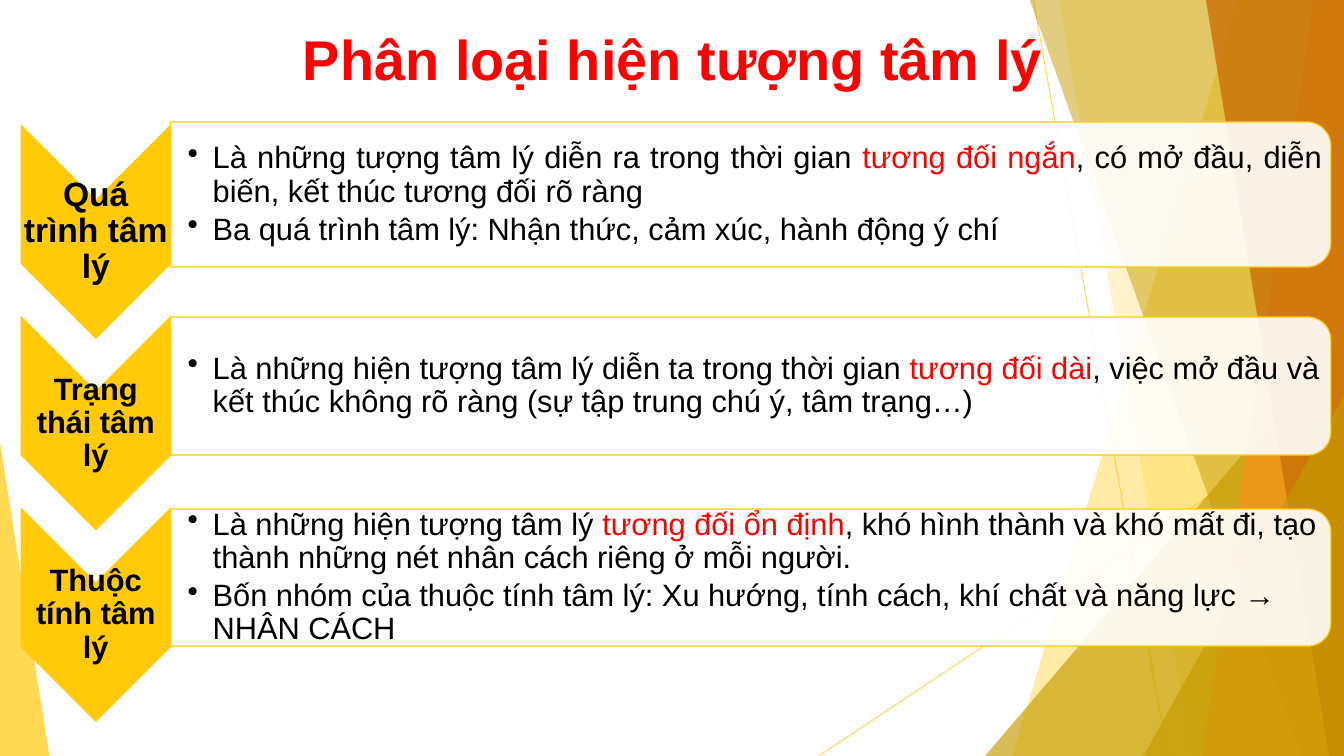
"""Build a slide that sorts psychological phenomena into three chevron rows."""
from dataclasses import dataclass

from lxml import etree
from pptx import Presentation
from pptx.dml.color import RGBColor
from pptx.enum.shapes import MSO_CONNECTOR, MSO_SHAPE
from pptx.enum.text import MSO_ANCHOR, MSO_AUTO_SIZE, PP_ALIGN
from pptx.oxml.ns import qn
from pptx.util import Inches, Pt

STRAIGHT = MSO_CONNECTOR.STRAIGHT
TRIANGLE, CHEVRON, PANEL = MSO_SHAPE.ISOSCELES_TRIANGLE, MSO_SHAPE.CHEVRON, MSO_SHAPE.ROUND_2_SAME_RECTANGLE
MIDDLE, NO_AUTOFIT = MSO_ANCHOR.MIDDLE, MSO_AUTO_SIZE.NONE
LEFT, CENTER, JUSTIFY = PP_ALIGN.LEFT, PP_ALIGN.CENTER, PP_ALIGN.JUSTIFY


@dataclass(frozen=True)
class Theme:
    font: str = "Arial"
    gold: RGBColor = RGBColor(0xFF, 0xCA, 0x08)
    dark_gold: RGBColor = RGBColor(0xC5, 0x9B, 0x00)
    orange: RGBColor = RGBColor(0xF8, 0x93, 0x1D)
    brown: RGBColor = RGBColor(0xCA, 0x6F, 0x06)
    white: RGBColor = RGBColor(0xFF, 0xFF, 0xFF)
    black: RGBColor = RGBColor(0, 0, 0)
    red: RGBColor = RGBColor(0xFF, 0, 0)
    title_size: Pt = Pt(40)
    large_label_size: Pt = Pt(24)
    body_size: Pt = Pt(22)


THEME = Theme()


def paint(shape, color, opacity=100, outline=None):
    """Fill a shape with a colour of the given opacity, with an optional outline."""
    shape.shadow.inherit = False
    shape.fill.solid()
    shape.fill.fore_color.rgb = color
    for color_element in shape.element.spPr.iter(qn("a:srgbClr")):
        etree.SubElement(color_element, qn("a:alpha"), val=str(opacity * 1000))
    if outline is None:
        shape.line.fill.background()
    else:
        shape.line.color.rgb = outline
        shape.line.width = Pt(0.85)


def add_text_frame(left, center, width, height, left_inset):
    """Add a vertically centred text box and return its text frame."""
    box = slide.shapes.add_textbox(Inches(left), Inches(center - height / 2), Inches(width), Inches(height))
    frame = box.text_frame
    frame.word_wrap = True
    frame.vertical_anchor = MIDDLE
    frame.margin_left = Inches(left_inset)
    frame.margin_right = frame.margin_top = frame.margin_bottom = Inches(0.02)
    return frame


presentation = Presentation()
presentation.slide_width, presentation.slide_height = Inches(13.33), Inches(7.5)
slide = presentation.slides.add_slide(presentation.slide_layouts[5])

for start_x, start_y, end_x, end_y in [(10.25, 0, 11.58, 7.5), (13.33, 4.03, 8.12, 7.5)]:
    line = slide.shapes.add_connector(STRAIGHT, Inches(start_x), Inches(start_y), Inches(end_x), Inches(end_y))
    line.line.color.rgb = THEME.gold
    line.line.width = Pt(0.75)
    properties = line.element.spPr
    for color_element in properties.iter(qn("a:srgbClr")):
        etree.SubElement(color_element, qn("a:alpha"), val="70000")
    etree.SubElement(properties, qn("a:effectLst"))

BANDS = [
    (12.28, 10.04, THEME.gold, 36),
    (10.5, 11.83, THEME.gold, 20),
    (9.77, 3.33, 3.56, 4.17, 1, THEME.dark_gold, 66),
    (10.21, 12.91, THEME.dark_gold, 50),
    (13.03, 11.92, THEME.orange, 70),
    (11.96, 13.18, THEME.brown, 80),
    (11.34, 3.93, 1.99, 3.57, 1, THEME.dark_gold, 66),
    (0, 4.39, 0.49, 3.11, 0, THEME.gold, 70),
]
for *geometry, color, opacity in BANDS:
    if len(geometry) == 2:
        top_x, bottom_x = geometry
        builder = slide.shapes.build_freeform(Inches(top_x), Inches(-0.01))
        corners = [(13.33, -0.01), (13.33, 7.5), (bottom_x, 7.5)]
        builder.add_line_segments([(Inches(x), Inches(y)) for x, y in corners])
        band = builder.convert_to_shape()
    else:
        *bounds, apex = geometry
        band = slide.shapes.add_shape(TRIANGLE, *map(Inches, bounds))
        band.adjustments[0] = apex
    paint(band, color, opacity)

title = slide.shapes.title
slide.shapes.element.append(title.element)
title.left, title.top, title.width, title.height = map(Inches, (0.92, 0.15, 11.5, 0.85))
title.text_frame.text = "Phân loại hiện tượng tâm lý"
title.text_frame.auto_size = NO_AUTOFIT
title.text_frame.vertical_anchor = MIDDLE
title_paragraph = title.text_frame.paragraphs[0]
title_paragraph.alignment = CENTER
title_paragraph.font.name = THEME.font
title_paragraph.font.size = THEME.title_size
title_paragraph.font.bold = True
title_paragraph.font.color.rgb = THEME.red

ROWS = [
    ("Quá trình tâm lý", THEME.large_label_size, 1.44, JUSTIFY, [
        ["Là những tượng tâm lý diễn ra trong thời gian ", "tương đối ngắn",
         ", có mở đầu, diễn biến, kết thúc tương đối rõ ràng"],
        ["Ba quá trình tâm lý: Nhận thức, cảm xúc, hành động ý chí"]]),
    ("Trạng thái tâm lý", THEME.body_size, 1.37, LEFT, [
        ["Là những hiện tượng tâm lý diễn ta trong thời gian ", "tương đối dài",
         ", việc mở đầu và kết thúc không rõ ràng (sự tập trung chú ý, tâm trạng…)"]]),
    ("Thuộc tính tâm lý", THEME.body_size, 1.36, LEFT, [
        ["Là những hiện tượng tâm lý ", "tương đối ổn định",
         ", khó hình thành và khó mất đi, tạo thành những nét nhân cách riêng ở mỗi người."],
        ["Bốn nhóm của thuộc tính tâm lý: Xu hướng, tính cách, khí chất và năng lực → NHÂN CÁCH"]]),
]
FIRST_CENTER, ROW_PITCH, CHEVRON_DROP = 1.93, 1.9, 0.37
CHEVRON_LEFT, CHEVRON_LENGTH, CHEVRON_WIDTH = 0.21, 2.11, 1.48
PANEL_LEFT, PANEL_WIDTH = CHEVRON_LEFT + CHEVRON_WIDTH, 11.51

for row, (label, label_size, panel_height, alignment, bullets) in enumerate(ROWS):
    panel_center = FIRST_CENTER + row * ROW_PITCH
    chevron_center = panel_center + CHEVRON_DROP
    turned_shapes = [
        (CHEVRON, CHEVRON_LEFT, chevron_center, CHEVRON_WIDTH, CHEVRON_LENGTH, THEME.gold, 100),
        (PANEL, PANEL_LEFT, panel_center, PANEL_WIDTH, panel_height, THEME.white, 90),
    ]
    for kind, left, center, width, height, color, opacity in turned_shapes:
        shape = slide.shapes.add_shape(kind, Inches(left + (width - height) / 2), Inches(center - width / 2),
                                       Inches(height), Inches(width))
        shape.rotation = 90
        paint(shape, color, opacity, THEME.gold)

    label_frame = add_text_frame(CHEVRON_LEFT, chevron_center, CHEVRON_WIDTH, 0.63, 0.02)
    label_frame.text = label
    label_paragraph = label_frame.paragraphs[0]
    label_paragraph.alignment = CENTER
    label_paragraph.line_spacing = 0.9
    label_paragraph.font.name = THEME.font
    label_paragraph.font.size = label_size
    label_paragraph.font.bold = True
    label_paragraph.font.color.rgb = THEME.black

    body_frame = add_text_frame(PANEL_LEFT, panel_center, 11.44, panel_height - 0.13, 0.17)
    for index, pieces in enumerate(bullets):
        paragraph = body_frame.add_paragraph() if index else body_frame.paragraphs[0]
        paragraph.alignment = alignment
        paragraph.line_spacing = 0.9
        paragraph.space_after = Pt(3.5)
        paragraph.font.name = THEME.font
        paragraph.font.size = THEME.body_size
        paragraph_properties = paragraph.font._element.getparent()
        paragraph_properties.set("marL", str(Inches(0.25)))
        paragraph_properties.set("indent", str(Inches(-0.25)))
        bullet = etree.Element(qn("a:buChar"), char="•")
        paragraph.font._element.addprevious(bullet)
        for piece_index, piece in enumerate(pieces):
            run = paragraph.add_run()
            run.text = piece
            run.font.color.rgb = THEME.red if piece_index == 1 else THEME.black

presentation.save("out.pptx")
